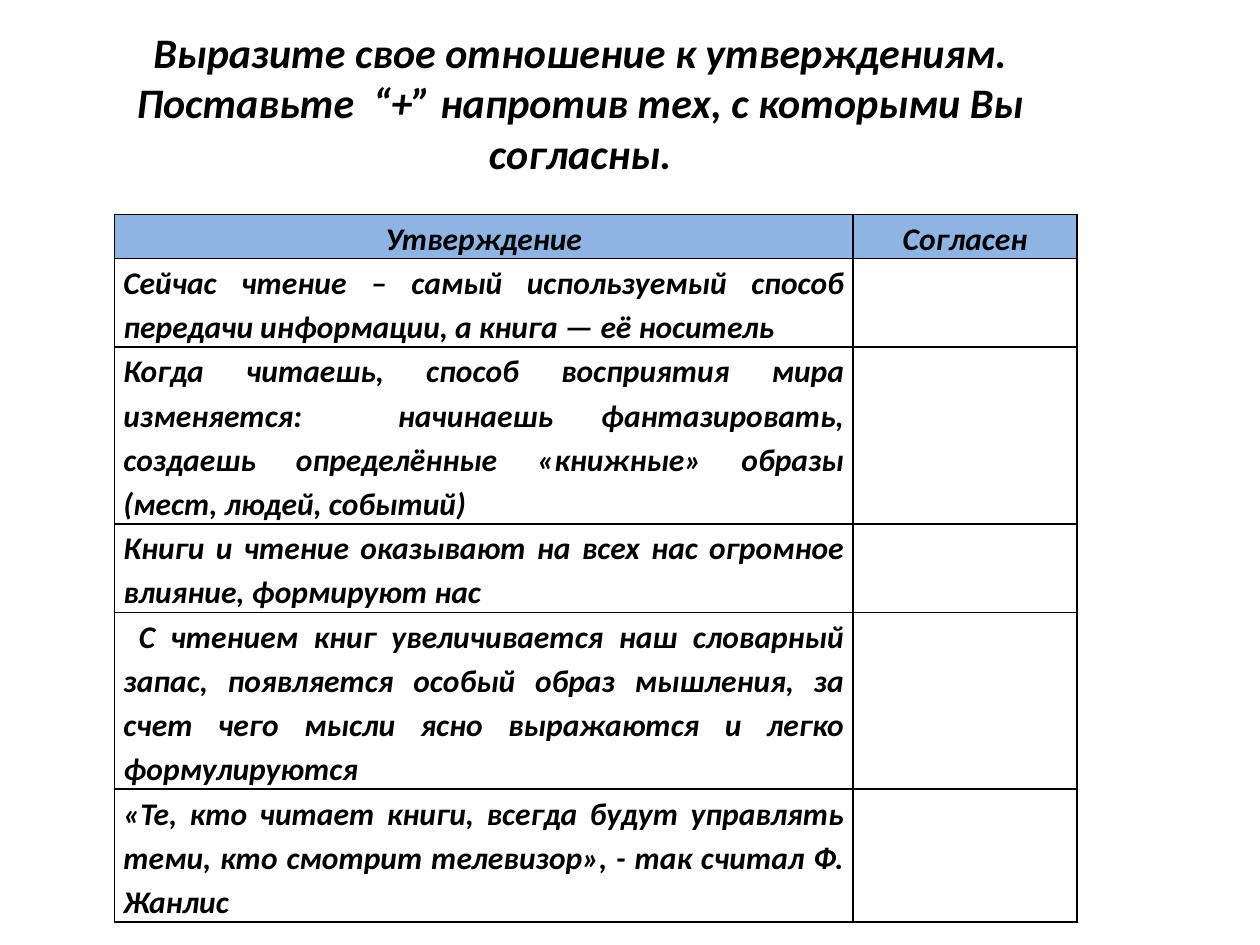
import pptx
import pptx.util
import pptx.dml.color
import pptx.enum.text
import pptx.oxml
import pptx.oxml.ns

Pt = pptx.util.Pt
ALIGN = pptx.enum.text.PP_ALIGN
COLORS = {"text": "000000", "border": "000000", "header": "8EB4E3"}
FONT = "Calibri"

TITLE = "Выразите свое отношение к утверждениям. Поставьте  “+” напротив тех, с которыми Вы согласны."
HEADER = ("Утверждение", "Согласен")
# Each statement with the number of lines it takes
STATEMENTS = [
    ("Сейчас чтение – самый используемый способ передачи информации, а книга — её носитель", 2),
    ("Когда читаешь, способ восприятия мира изменяется:  начинаешь фантазировать, "
     "создаешь определённые «книжные» образы (мест, людей, событий)", 4),
    ("Книги и чтение оказывают на всех нас огромное влияние, формируют нас", 2),
    (" С чтением книг увеличивается наш словарный запас, появляется особый образ мышления, "
     "за счет чего мысли ясно выражаются и легко формулируются", 4),
    ("«Те, кто читает книги, всегда будут управлять теми, кто смотрит телевизор», "
     "- так считал Ф. Жанлис", 3),
]
COL_WIDTHS = (422, 128)
LINE_HEIGHT = 25.2


def rgb(name):
    return pptx.dml.color.RGBColor.from_string(COLORS[name])


def format_paragraph(p, size, align):
    p.alignment = align
    p.font.name = FONT
    p.font.size = Pt(size)
    p.font.bold = p.font.italic = True
    p.font.color.rgb = rgb("text")


def add_borders(cell):
    """Draw a 1 pt line on all sides; call before setting the cell's fill."""
    tc_pr = cell._tc.get_or_add_tcPr()
    for side in ("lnL", "lnR", "lnT", "lnB"):
        tc_pr.append(pptx.oxml.parse_xml(
            f'<a:{side} {pptx.oxml.ns.nsdecls("a")} w="{Pt(1)}"><a:solidFill>'
            f'<a:srgbClr val="{COLORS["border"]}"/></a:solidFill></a:{side}>'))


def add_title(slide):
    sp = slide.shapes.title
    sp.left, sp.top, sp.width, sp.height = Pt(36.7), Pt(26), Pt(589.7), Pt(90)
    tf = sp.text_frame
    tf.text = TITLE
    tf.word_wrap = True
    tf.auto_size = pptx.enum.text.MSO_AUTO_SIZE.NONE
    tf.vertical_anchor = pptx.enum.text.MSO_ANCHOR.MIDDLE
    tf.margin_bottom = Pt(29)
    format_paragraph(tf.paragraphs[0], 24, ALIGN.CENTER)


def add_statement_table(slide):
    rows = [HEADER] + [(text, "") for text, _ in STATEMENTS]
    heights = [LINE_HEIGHT * n for n in [1] + [lines for _, lines in STATEMENTS]]
    table = slide.shapes.add_table(
        len(rows), len(COL_WIDTHS), Pt(65.5), Pt(122.5),
        Pt(sum(COL_WIDTHS)), Pt(sum(heights))).table
    for column, width in zip(table.columns, COL_WIDTHS):
        column.width = Pt(width)
    for r, (texts, height) in enumerate(zip(rows, heights)):
        table.rows[r].height = Pt(height)
        for c, text in enumerate(texts):
            cell = table.cell(r, c)
            add_borders(cell)
            if r == 0:
                cell.fill.solid()
                cell.fill.fore_color.rgb = rgb("header")
            else:
                cell.fill.background()
            cell.margin_left = cell.margin_right = Pt(5)
            cell.margin_top = cell.margin_bottom = 0
            if text:
                cell.text = text
                p = cell.text_frame.paragraphs[0]
                p.line_spacing = 1.15
                format_paragraph(p, 18, ALIGN.JUSTIFY if r else ALIGN.CENTER)


def main():
    prs = pptx.Presentation()
    prs.slide_width, prs.slide_height = Pt(720), Pt(540)
    slide = prs.slides.add_slide(prs.slide_layouts[5])
    add_title(slide)
    add_statement_table(slide)
    prs.save("out.pptx")


if __name__ == "__main__":
    main()
